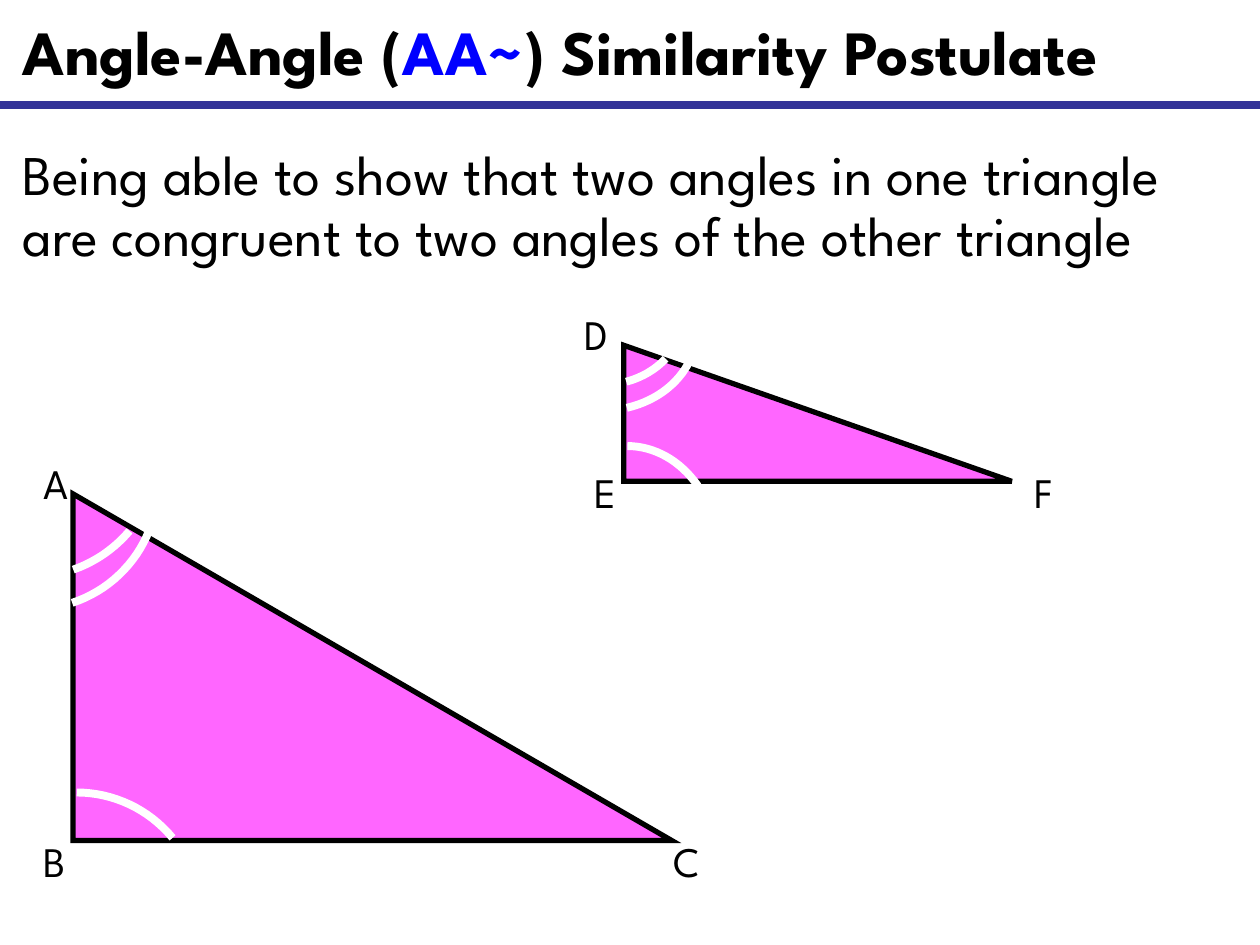
from lxml import etree
from pptx import Presentation
from pptx.dml.color import RGBColor
from pptx.enum.shapes import MSO_CONNECTOR, MSO_SHAPE
from pptx.enum.text import MSO_ANCHOR, MSO_AUTO_SIZE, PP_ALIGN
from pptx.oxml.ns import qn
from pptx.util import Pt

PX = 9144
FONT = "League Spartan"
LINE = MSO_CONNECTOR.STRAIGHT
WEDGE = MSO_SHAPE.RIGHT_TRIANGLE
TOP = MSO_ANCHOR.TOP
LEFT = PP_ALIGN.LEFT
FIXED = MSO_AUTO_SIZE.NONE
STEPS = 16
TURN = 111.3
WIDE = [(0, 0), (0.38, 0), (0.75, 0.13), (1, 0.36)]
SHORT = [(0.41, 0), (0.63, 0.06), (0.84, 0.17), (1, 0.32)]
BLACK, BLUE, NAVY, PINK, WHITE = "000000", "0000FF", "333399", "FF66FF", "FFFFFF"


def color(code):
    return RGBColor.from_string(code)


def scale(*sizes):
    return [round(size * PX) for size in sizes]


def stroke(line, code, width):
    line.color.rgb = color(code)
    line.width = Pt(width)


def write(para, text, size, code=BLACK, bold=False):
    run = para.add_run()
    run.text = text
    run.font.name = FONT
    run.font.size = Pt(size)
    run.font.bold = bold
    run.font.color.rgb = color(code)


def fill_holder(holder, box, size, parts, bold):
    holder.left, holder.top, holder.width, holder.height = scale(*box)
    frame = holder.text_frame
    frame.auto_size = FIXED
    frame.vertical_anchor = TOP
    para = frame.paragraphs[0]
    para.alignment = LEFT
    para.line_spacing = 0.9
    para.space_before = Pt(0)
    props = para._p.get_or_add_pPr()
    props.set("marL", "0")
    props.set("indent", "0")
    etree.SubElement(props, qn("a:buNone"))
    for text, code in parts:
        write(para, text, size, code, bold)


def add_rule(slide, box):
    x, y, w, h = box
    rule = slide.shapes.add_connector(LINE, *scale(x, y, x + w, y + h))
    stroke(rule.line, NAVY, 4.5)
    etree.SubElement(rule._element.spPr, qn("a:effectLst"))


def add_label(slide, box, text):
    frame = slide.shapes.add_textbox(*scale(*box)).text_frame
    frame.word_wrap = False
    write(frame.paragraphs[0], text, 24)


def curve(a, b, c, d, t):
    s = 1 - t
    return s**3 * a + 3 * s * s * t * b + 3 * s * t * t * c + t**3 * d


def add_arc(slide, box, knots, turn):
    x, y, w, h = box
    across, down = zip(*knots)
    dots = [
        scale(x + w * curve(*across, i / STEPS), y + h * curve(*down, i / STEPS))
        for i in range(STEPS + 1)
    ]
    pen = slide.shapes.build_freeform(*dots[0])
    pen.add_line_segments(dots[1:], close=False)
    pen.move_to(*scale(x, y + h))
    arc = pen.convert_to_shape()
    arc.rotation = turn
    arc.shadow.inherit = False
    arc.fill.background()
    stroke(arc.line, WHITE, 4.5)


def add_figure(slide, box, labels, arcs):
    x, y, w, h = box
    wedge = slide.shapes.add_shape(WEDGE, *scale(*box))
    wedge.shadow.inherit = False
    wedge.fill.solid()
    wedge.fill.fore_color.rgb = color(PINK)
    stroke(wedge.line, BLACK, 3)
    edge = wedge._element.spPr.find(qn("a:ln"))
    etree.SubElement(edge, qn("a:miter"), lim="800000")
    for text, dx, dy, width in labels:
        add_label(slide, (x + dx, y + dy, width, 51), text)
    for (dx, dy, width, height), knots, turn in arcs:
        add_arc(slide, (x + dx, y + dy, width, height), knots, turn)


def main():
    deck = Presentation()
    deck.slide_width, deck.slide_height = scale(1000, 750)
    slide = deck.slides.add_slide(deck.slide_layouts[1])
    title, body = slide.placeholders
    fill_holder(title, (8, 12, 958, 65), 36, [
        ("Angle-Angle (", BLACK),
        ("AA~", BLUE),
        (") Similarity Postulate", BLACK),
    ], True)
    fill_holder(body, (8, 112, 958, 120), 32, [
        ("Being able to show that two angles in one triangle "
         "are congruent to two angles of the other triangle", BLACK),
    ], False)
    add_rule(slide, (0, 83, 1000, 0))
    add_figure(slide, (58, 392, 475, 275), [
        ("A", -33, -34, 50), ("B", -33, 266, 39), ("C", 467, 266, 48),
    ], [
        ((3, 237, 76, 100), WIDE, 0),
        ((-38, -4, 76, 100), WIDE, TURN),
        ((-40, -29, 76, 95), SHORT, TURN),
    ])
    add_figure(slide, (495, 274, 308, 108), [
        ("D", -41, -34, 45), ("E", -33, 91, 38), ("F", 316, 91, 36),
    ], [
        ((3, 80, 56, 88), WIDE, 0),
        ((-28, -28, 58, 92), WIDE, TURN),
        ((-25, -33, 48, 70), SHORT, TURN),
    ])
    deck.save("out.pptx")


if __name__ == "__main__":
    main()
